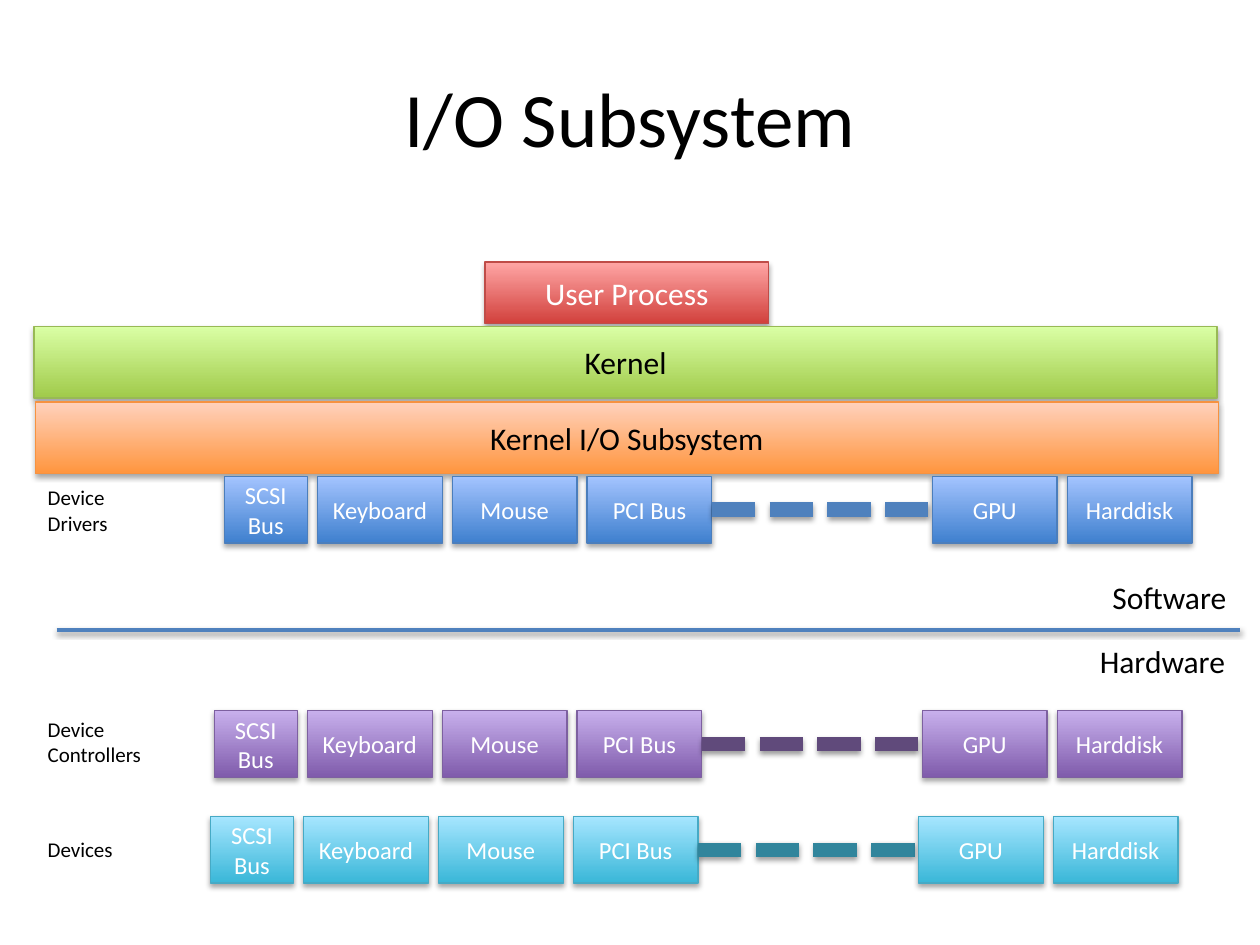
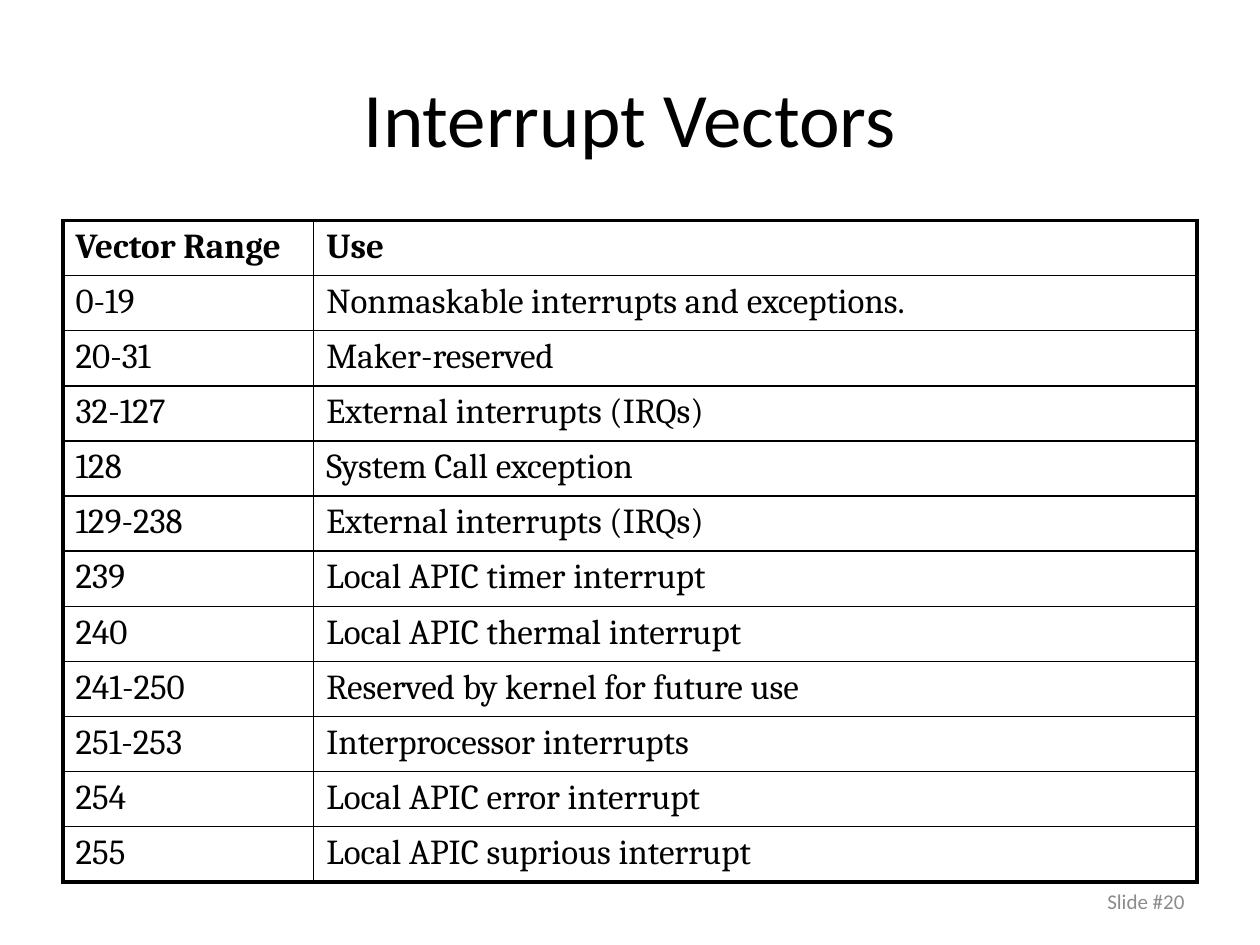
from lxml import etree
from pptx import Presentation
from pptx.dml.color import RGBColor
from pptx.enum.dml import MSO_LINE
from pptx.enum.shapes import MSO_CONNECTOR, MSO_SHAPE
from pptx.enum.text import MSO_ANCHOR, PP_ALIGN
from pptx.oxml.ns import qn
from pptx.util import Inches, Pt

LEFT, CENTER, RIGHT = PP_ALIGN.LEFT, PP_ALIGN.CENTER, PP_ALIGN.RIGHT
TOP, MIDDLE = MSO_ANCHOR.TOP, MSO_ANCHOR.MIDDLE
RECTANGLE = MSO_SHAPE.RECTANGLE
STRAIGHT = MSO_CONNECTOR.STRAIGHT
SQUARE_DOT = MSO_LINE.SQUARE_DOT

BLACK = RGBColor(0x00, 0x00, 0x00)
WHITE = RGBColor(0xFF, 0xFF, 0xFF)
GRAY = RGBColor(0x8C, 0x8C, 0x8C)
DIVIDER_BLUE = RGBColor(0x4F, 0x81, 0xBD)
DOTS_PURPLE = RGBColor(0x60, 0x4A, 0x7B)
DOTS_TEAL = RGBColor(0x31, 0x85, 0x9C)

# Each palette: gradient bottom, gradient top, outline
RED = (RGBColor(0xD1, 0x40, 0x3C), RGBColor(0xFF, 0xA6, 0xA5), RGBColor(0xBF, 0x4C, 0x48))
GREEN = (RGBColor(0xA0, 0xCA, 0x4A), RGBColor(0xDA, 0xFF, 0xA5), RGBColor(0x98, 0xB9, 0x55))
ORANGE = (RGBColor(0xFF, 0x95, 0x3E), RGBColor(0xFF, 0xD2, 0xBD), RGBColor(0xF6, 0x92, 0x40))
BLUE = (RGBColor(0x3F, 0x80, 0xCE), RGBColor(0xA4, 0xC4, 0xFF), RGBColor(0x4B, 0x7E, 0xBC))
PURPLE = (RGBColor(0x7F, 0x5B, 0xAB), RGBColor(0xC8, 0xB0, 0xED), RGBColor(0x7D, 0x60, 0xA0))
TEAL = (RGBColor(0x39, 0xB7, 0xD8), RGBColor(0xA7, 0xE6, 0xFF), RGBColor(0x46, 0xAA, 0xC5))

BODY_FONT, TABLE_FONT = "Calibri", "Cambria"

# text, (left, top, width, height), palette, font colour
LAYERS = [
    ("User Process", (3.85, 2.08, 2.25, 0.49), RED, WHITE),
    ("Kernel", (0.27, 2.59, 9.39, 0.57), GREEN, BLACK),
    ("Kernel I/O Subsystem", (0.28, 3.19, 9.39, 0.57), ORANGE, BLACK),
]

# A name of None stands for the dotted line between boxes
DEVICES = [("SCSI\nBus", 0.66), ("Keyboard", 0.99), ("Mouse", 0.99), ("PCI Bus", 0.99),
           (None, 1.75), ("GPU", 0.99), ("Harddisk", 0.99)]
DEVICE_HEIGHT, DEVICE_GAP = 0.53, 0.08

# label, (label top, width, height), left and top of first box, palette, dots colour
DEVICE_ROWS = [
    ("Device\nDrivers", (3.8, 0.69, 0.5), (1.78, 3.78), BLUE, DIVIDER_BLUE),
    ("Device\nControllers", (5.64, 0.96, 0.5), (1.7, 5.64), PURPLE, DOTS_PURPLE),
    ("Devices", (6.59, 0.73, 0.3), (1.67, 6.48), TEAL, DOTS_TEAL),
]
ROW_LABEL_LEFT = 0.28

SIDES = [("Software", (8.73, 4.54, 1.12, 0.4)), ("Hardware", (8.63, 5.05, 1.22, 0.4))]

VECTORS = [
    ("Vector Range", "Use"),
    ("0-19", "Nonmaskable interrupts and exceptions."),
    ("20-31", "Maker-reserved"),
    ("32-127", "External interrupts (IRQs)"),
    ("128", "System Call exception"),
    ("129-238", "External interrupts (IRQs)"),
    ("239", "Local APIC timer interrupt"),
    ("240", "Local APIC thermal interrupt"),
    ("241-250", "Reserved by kernel for future use"),
    ("251-253", "Interprocessor interrupts"),
    ("254", "Local APIC error interrupt"),
    ("255", "Local APIC suprious interrupt"),
]
VECTOR_COLUMNS = (1.99, 7.01)
OUTER_BORDER, INNER_BORDER = Pt(2.25), Pt(1)


def write(frame, text, size, color, align=LEFT, anchor=TOP, wrap=True):
    frame.text = text
    frame.word_wrap = wrap
    frame.vertical_anchor = anchor
    for paragraph in frame.paragraphs:
        paragraph.alignment = align
        font = paragraph.font
        font.name, font.size, font.color.rgb = BODY_FONT, Pt(size), color


def add_text(slide, box, *args, **kwargs):
    frame = slide.shapes.add_textbox(*map(Inches, box)).text_frame
    write(frame, *args, **kwargs)


def add_title(slide, text):
    add_text(slide, (0.5, 0.3, 9, 1.25), text, 44, BLACK, CENTER, MIDDLE)


def drop_shadow(properties, distance, opacity):
    """Give a shape's spPr a soft shadow straight below it."""
    effects = properties.find(qn("a:effectLst"))
    if effects is None:
        effects = etree.SubElement(properties, qn("a:effectLst"))
    shadow = etree.SubElement(effects, qn("a:outerShdw"), blurRad=str(Pt(3.1)),
                              dist=str(Pt(distance)), dir="5400000", rotWithShape="0")
    black = etree.SubElement(shadow, qn("a:srgbClr"), val=str(BLACK))
    etree.SubElement(black, qn("a:alpha"), val=str(opacity * 1000))


def add_block(slide, box, text, palette, size, color):
    block = slide.shapes.add_shape(RECTANGLE, *map(Inches, box))
    bottom, top, outline = palette
    block.fill.gradient()
    block.fill.gradient_angle = 90
    for stop, shade in zip(block.fill.gradient_stops, (bottom, top)):
        stop.color.rgb = shade
    block.line.color.rgb = outline
    block.line.width = Pt(0.75)
    block.shadow.inherit = False
    drop_shadow(block._element.spPr, 1.8, 35)
    write(block.text_frame, text, size, color, CENTER, MIDDLE)


def add_rule(slide, left, right, y, color, width, dash=None):
    rule = slide.shapes.add_connector(STRAIGHT, Inches(left), Inches(y), Inches(right), Inches(y))
    rule.line.color.rgb = color
    rule.line.width = Pt(width)
    if dash is not None:
        rule.line.dash_style = dash
    drop_shadow(rule._element.spPr, 1.6, 38)


def add_device_row(slide, left, top, palette, dots_color):
    for position, (name, width) in enumerate(DEVICES):
        if name is None:
            add_rule(slide, left, left + width, top + DEVICE_HEIGHT / 2, dots_color, 8.25, SQUARE_DOT)
        else:
            add_block(slide, (left, top, width, DEVICE_HEIGHT), name, palette, 14, WHITE)
        left += width
        following = DEVICES[position + 1:position + 2]
        if name and following and following[0][0]:
            left += DEVICE_GAP


def border_cell(cell, widths):
    """Draw the left, right, top and bottom borders of a cell."""
    properties = cell._tc.get_or_add_tcPr()
    for side, width in zip("LRTB", widths):
        line = etree.SubElement(properties, qn(f"a:ln{side}"), w=str(width))
        fill = etree.SubElement(line, qn("a:solidFill"))
        etree.SubElement(fill, qn("a:srgbClr"), val=str(BLACK))


def add_vector_table(slide):
    rows, columns = len(VECTORS), len(VECTOR_COLUMNS)
    table = slide.shapes.add_table(rows, columns, Inches(0.5), Inches(1.75),
                                   Inches(9), Inches(5.25)).table
    table.first_row = table.horz_banding = False
    for column, width in zip(table.columns, VECTOR_COLUMNS):
        column.width = Inches(width)
    for r, record in enumerate(VECTORS):
        for c, text in enumerate(record):
            cell = table.cell(r, c)
            on_edge = (c == 0, c == columns - 1, r == 0, r == rows - 1)
            border_cell(cell, [OUTER_BORDER if edge else INNER_BORDER for edge in on_edge])
            cell.fill.background()
            cell.text = text
            paragraph = cell.text_frame.paragraphs[0]
            paragraph.space_before = Pt(4)
            font = paragraph.font
            font.name, font.size, font.bold = TABLE_FONT, Pt(20), r == 0
            font.color.rgb = BLACK


def build_subsystem(slide):
    add_title(slide, "I/O Subsystem")
    for text, box, palette, color in LAYERS:
        add_block(slide, box, text, palette, 18, color)
    for label, label_box, (left, top), palette, dots_color in DEVICE_ROWS:
        add_device_row(slide, left, top, palette, dots_color)
        add_text(slide, (ROW_LABEL_LEFT, *label_box), label, 12, BLACK, wrap=False)
    add_rule(slide, 0.45, 9.84, 5, DIVIDER_BLUE, 2)
    for text, box in SIDES:
        add_text(slide, box, text, 18, BLACK, wrap=False)


def build_vectors(slide):
    add_title(slide, "Interrupt Vectors")
    add_vector_table(slide)
    add_text(slide, (7.17, 6.95, 2.33, 0.4), "Slide #20", 12, GRAY, RIGHT, MIDDLE)


def main():
    deck = Presentation()
    deck.slide_width, deck.slide_height = Inches(10), Inches(7.5)
    blank = deck.slide_layouts[6]
    for build in (build_subsystem, build_vectors):
        build(deck.slides.add_slide(blank))
    deck.save("out.pptx")


if __name__ == "__main__":
    main()
